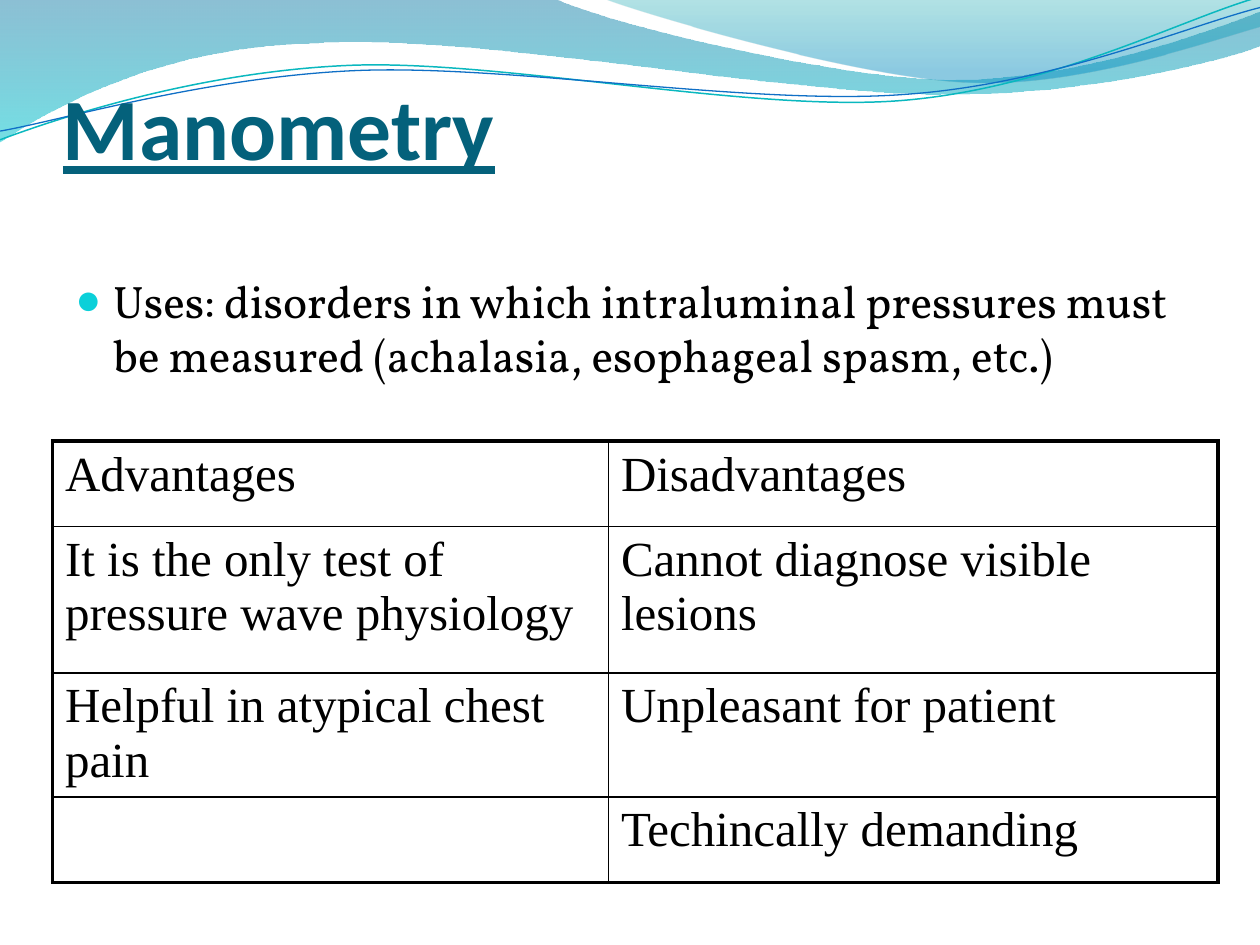
from dataclasses import dataclass
from typing import Any

from lxml import etree
from pptx import Presentation
from pptx import util as u
from pptx.dml import color
from pptx.enum import text
from pptx.oxml import ns

Pt = u.Pt
OUTER, INNER = 2.25, 1
BLACK = "000000"


@dataclass
class Wave:
    """Outline in points: a pair is a straight step, six numbers a cubic curve."""
    start: tuple[float, float]
    steps: list[tuple[float, ...]]
    stops: tuple[tuple[float, str, int], ...] = ()  # position, colour, opacity %
    line: str = ""
    weight: float = 0


@dataclass
class TextBlock:
    words: str
    place: tuple[float, float, float, float]
    frame_format: dict[str, Any]
    font: dict[str, Any]
    hex_color: str


WAVES = [
    Wave((0, 0), [
        (317, -0.7), (342.7, 12.2, 478, 45.4, 545.8, 45.4),
        (614.2, 45.4, 689.8, 18.7, 720, 6.5), (720.7, 25.9),
        (707.8, 31.7, 626.4, 54.7, 537.1, 54),
        (447.8, 54, 275, 20.2, 185, 24.5),
        (92.9, 25.9, 33.1, 59.8, -0.7, 81.4)],
        stops=((0, "0074A1", 45), (1, "00C6CF", 55))),
    Wave((344.9, -0.7), [
        (366.5, 7.9, 491, 44.6, 553.7, 46.8),
        (616.3, 49.7, 691.9, 23, 720, 15.1), (720, 0)],
        stops=((0, "00A1A9", 30), (0.8, "008BBF", 45))),
    Wave((0, 79.9), [
        (34.6, 67, 113.8, 41, 199.4, 37.4),
        (284.4, 33.8, 427, 64.1, 513.4, 57.6),
        (599.8, 51.1, 675.4, 10.8, 718.6, -1.4)],
        line="0AB8BF", weight=0.85),
    Wave((0, 74.9), [
        (33.8, 69.1, 118.1, 43.9, 203.8, 40.3),
        (290.2, 36.7, 429.8, 60.5, 516.2, 54),
        (601.9, 48.2, 677.5, 15.1, 720, 4.3)],
        line="0F6FC6", weight=0.75),
]

TITLE = TextBlock(
    "Manometry", (36, 12, 648, 90),
    dict(vertical_anchor=text.MSO_ANCHOR.BOTTOM, margin_left=0, margin_right=0,
         margin_bottom=0),
    dict(name="Calibri", size=Pt(50), bold=True, underline=True), "04617B")
USES = TextBlock(
    "Uses: disorders in which intraluminal pressures must be measured "
    "(achalasia, esophageal spasm, etc.)", (36, 152.4, 648, 345.6),
    {}, dict(name="Vollkorn", size=Pt(26)), BLACK)

TABLE_PLACE = (30, 252, 666, 252)
COLUMN_WIDTHS = (317.7, 348.3)
ROW_HEIGHTS = (49, 83.5, 70.5, 49)
TABLE_FONT = dict(name="Times New Roman", size=Pt(28))
ROWS = [
    ("Advantages", "Disadvantages"),
    ("It is the only test of pressure wave physiology",
     "Cannot diagnose visible lesions"),
    ("Helpful in atypical chest pain", "Unpleasant for patient"),
    ("", "Techincally demanding"),
]


def rgb(hex_color: str) -> color.RGBColor:
    return color.RGBColor.from_string(hex_color)


def apply(target: Any, values: dict[str, Any]) -> None:
    for name, value in values.items():
        setattr(target, name, value)


def add_span(para: Any, words: str, font: dict[str, Any], hex_color: str) -> None:
    span = para.add_run()
    span.text = words
    apply(span.font, font)
    span.font.color.rgb = rgb(hex_color)


def bend(shape: Any, steps: list[tuple[float, ...]]) -> None:
    """Join the three segments of each cubic step into one Bézier curve."""
    segments = iter(list(shape._element.spPr.iter(ns.qn("a:lnTo"))))
    for step in steps:
        first, *others = [next(segments) for _ in range(len(step) // 2)]
        if others:
            first.tag = ns.qn("a:cubicBezTo")
            for other in others:
                first.append(other[0])
                other.getparent().remove(other)


def draw_wave(page: Any, wave: Wave) -> None:
    points = [(Pt(step[i]), Pt(step[i + 1]))
              for step in wave.steps for i in range(0, len(step), 2)]
    builder = page.shapes.build_freeform(*map(Pt, wave.start), scale=1.0)
    builder.add_line_segments(points, close=bool(wave.stops))
    shape = builder.convert_to_shape()
    bend(shape, wave.steps)
    shape.shadow.inherit = False
    if not wave.stops:
        shape.fill.background()
        shape.line.color.rgb = rgb(wave.line)
        shape.line.width = Pt(wave.weight)
        return
    shape.line.fill.background()
    shape.fill.gradient()
    shape.fill.gradient_angle = 270  # downwards
    for stop, (position, hex_color, _) in zip(shape.fill.gradient_stops, wave.stops):
        stop.position = position
        stop.color.rgb = rgb(hex_color)
    tints = shape._element.spPr.iter(ns.qn("a:srgbClr"))
    for tint, (_, _, opacity) in zip(list(tints), wave.stops):
        etree.SubElement(tint, ns.qn("a:alpha"), val=str(opacity * 1000))


def draw_text(page: Any, block: TextBlock) -> Any:
    box = page.shapes.add_textbox(*map(Pt, block.place))
    frame = box.text_frame
    apply(frame, dict(word_wrap=True, **block.frame_format))
    para = frame.paragraphs[0]
    add_span(para, block.words, block.font, block.hex_color)
    return para


def add_bullet(para: Any, hex_color: str, indent: float) -> None:
    props = para._p.get_or_add_pPr()
    props.set("marL", str(Pt(indent)))
    props.set("indent", str(-Pt(indent)))
    tint = etree.SubElement(props, ns.qn("a:buClr"))
    etree.SubElement(tint, ns.qn("a:srgbClr"), val=hex_color)
    etree.SubElement(props, ns.qn("a:buSzPct"), val="95000")
    etree.SubElement(props, ns.qn("a:buFont"), typeface="Times New Roman")
    etree.SubElement(props, ns.qn("a:buChar"), char="●")


def set_borders(cell: Any, weights: dict[str, float]) -> None:
    props = cell._tc.get_or_add_tcPr()
    for i, (side, weight) in enumerate(weights.items()):
        edge = etree.Element(ns.qn(f"a:ln{side}"), w=str(Pt(weight)))
        fill = etree.SubElement(edge, ns.qn("a:solidFill"))
        etree.SubElement(fill, ns.qn("a:srgbClr"), val=BLACK)
        props.insert(i, edge)


def draw_table(page: Any) -> None:
    last_row, last_column = len(ROWS) - 1, len(COLUMN_WIDTHS) - 1
    table = page.shapes.add_table(
        len(ROWS), len(COLUMN_WIDTHS), *map(Pt, TABLE_PLACE)).table
    apply(table, dict(first_row=False, horz_banding=False))
    for column, width in zip(table.columns, COLUMN_WIDTHS):
        column.width = Pt(width)
    for r, (words_in_row, height) in enumerate(zip(ROWS, ROW_HEIGHTS)):
        table.rows[r].height = Pt(height)
        for c, words in enumerate(words_in_row):
            cell = table.cell(r, c)
            cell.margin_bottom = 0
            cell.fill.background()
            on_edge = dict(L=c == 0, R=c == last_column, T=r == 0, B=r == last_row)
            set_borders(cell, {side: OUTER if edge else INNER
                               for side, edge in on_edge.items()})
            if words:
                add_span(cell.text_frame.paragraphs[0], words, TABLE_FONT, BLACK)


def main() -> None:
    deck = Presentation()
    apply(deck, dict(slide_width=Pt(720), slide_height=Pt(540)))
    page = deck.slides.add_slide(deck.slide_layouts[6])

    # Wave decoration along the top
    for wave in WAVES:
        draw_wave(page, wave)

    # Heading and bullet
    draw_text(page, TITLE)
    add_bullet(draw_text(page, USES), "0BD0D9", 21.6)

    # Comparison table
    draw_table(page)
    deck.save("out.pptx")


if __name__ == "__main__":
    main()
